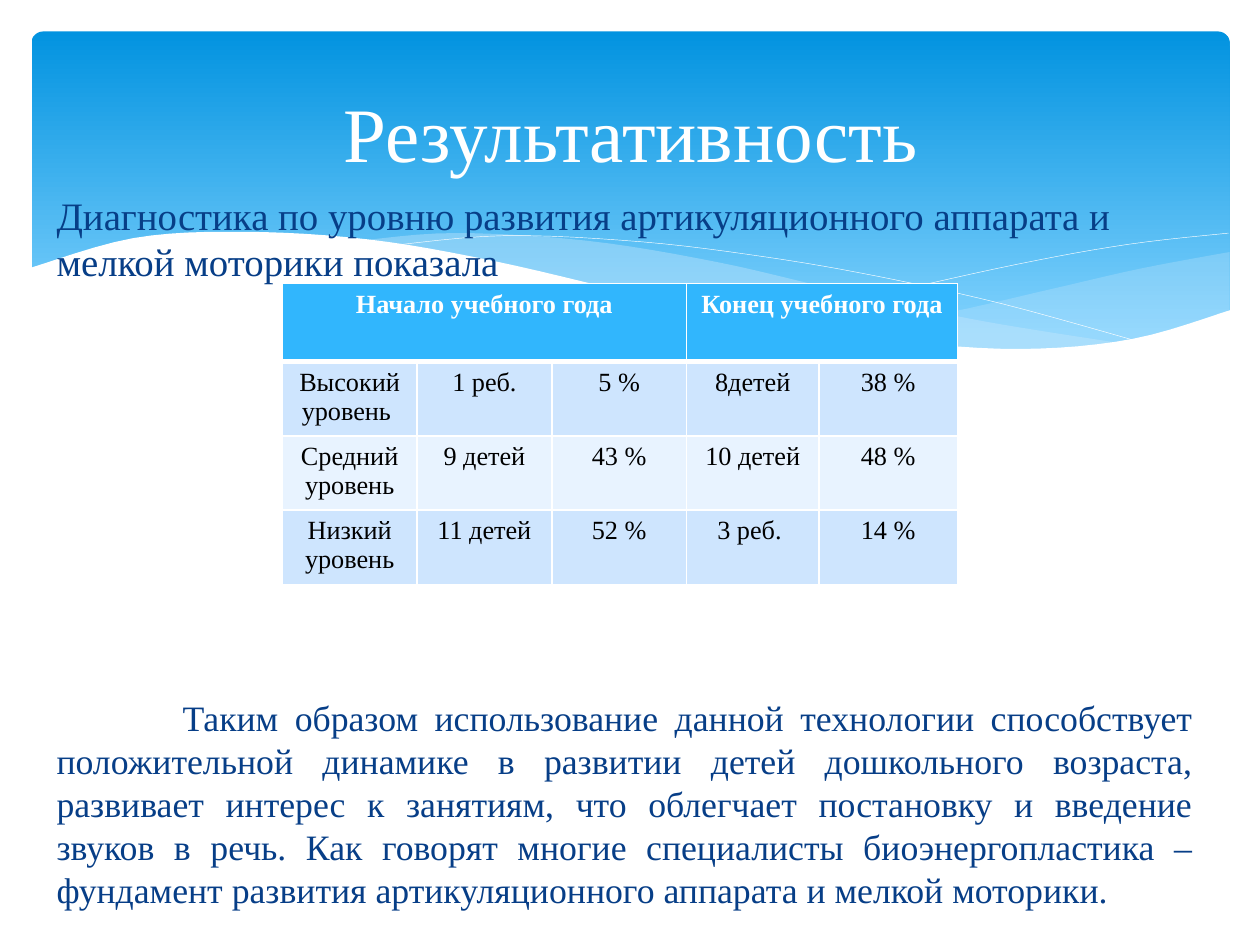
from dataclasses import dataclass
from itertools import chain
from lxml import etree
from pptx import Presentation
from pptx.dml.color import RGBColor
from pptx.enum.shapes import MSO_SHAPE
from pptx.enum.text import MSO_ANCHOR, PP_ALIGN
from pptx.oxml.ns import qn
from pptx.util import Inches, Pt

ROUND = MSO_SHAPE.ROUNDED_RECTANGLE
MIDDLE = MSO_ANCHOR.MIDDLE
LEFT, CENTER, JUST = PP_ALIGN.LEFT, PP_ALIGN.CENTER, PP_ALIGN.JUSTIFY


@dataclass(frozen=True)
class Theme:
    font: str = "Times New Roman"
    white: str = "FFFFFF"
    black: str = "000000"
    navy: str = "073E87"
    sky: tuple = ("0293E0", "83D3FE")
    mist: str = "C6E7FC"
    head: str = "31B6FD"
    bands: tuple = ("CEE5FE", "E8F3FF")
    title: float = 44
    lead: float = 22.2
    body: float = 20.4
    cell: float = 15
    hair: float = 0.25
    edge: float = 1
    rule: float = 3


THEME = Theme()
STEPS = 6

RIGHT_TOP = [(9.76, 2), (9.06, 2.13), (8.32, 2.3), (7.53, 2.48), (6.61, 2.65)]
RIGHT_LOW = [(6.61, 2.65), (7.32, 2.74), (8.03, 2.78), (8.72, 2.74), (9.28, 2.63), (9.76, 2.47)]
MID_TOP = [(8.93, 2.73), (7.75, 2.54), (6.68, 2.31), (5.69, 2.08), (4.65, 1.91), (3.61, 1.85), (2.86, 1.91)]
MID_LOW = [(2.86, 1.91), (3.83, 2.07), (4.91, 2.32), (6.01, 2.55), (6.95, 2.7), (7.96, 2.78), (8.93, 2.73)]
FALL = [(3.09, 1.95), (4.01, 1.87), (5.1, 1.92), (6.08, 2.04), (6.95, 2.19), (7.95, 2.41), (9.07, 2.72)]
RISE = [(6.13, 2.57), (6.95, 2.35), (8.06, 2.1), (8.95, 1.94), (9.75, 1.85)]
CREST = [(9.77, 2.46), (8.99, 2.69), (8.09, 2.77), (7.08, 2.7), (6.03, 2.54), (5.03, 2.33),
         (3.91, 2.07), (2.92, 1.9), (1.93, 1.84), (1.06, 1.89), (0.23, 2.13)]
BASE = [(0.23, 3.29), (9.77, 3.29)]

LEAD = "Диагностика по уровню развития артикуляционного аппарата и мелкой моторики показала"
CLOSE = (
    "Таким образом использование данной технологии способствует положительной "
    "динамике в развитии детей дошкольного возраста, развивает интерес к занятиям, "
    "что облегчает постановку и введение звуков в речь. Как говорят многие "
    "специалисты биоэнергопластика – фундамент развития артикуляционного аппарата "
    "и мелкой моторики."
)
COLS = (1.07, 1.07, 1.07, 1.05, 1.1)
ROWS = (0.62, 0.59, 0.59, 0.59)
HEADS = [(0, 2, "Начало учебного года"), (3, 4, "Конец учебного года")]
LEVELS = [
    ("Высокий уровень ", "1 реб.", "5 %", "8детей", "38 %"),
    ("Средний уровень", "9 детей", "43 %", "10 детей", "48 %"),
    ("Низкий уровень", "11 детей", "52 %", "3 реб. ", "14 %"),
]


def rgb(color):
    return RGBColor.from_string(color)


def paint(fill, color):
    fill.solid()
    fill.fore_color.rgb = rgb(color)


def write(par, text, size, color, align=LEFT, bold=False, before=0, indent=0):
    par.alignment = align
    par.space_before = Pt(before)
    if indent:
        par._p.get_or_add_pPr().set("indent", str(Inches(indent)))
    run = par.add_run()
    run.text = text
    font = run.font
    font.name, font.size, font.bold = THEME.font, Pt(size), bold
    font.color.rgb = rgb(color)


def add_box(slide, left, top, width, height):
    box = slide.shapes.add_textbox(*map(Inches, (left, top, width, height)))
    box.text_frame.word_wrap = True
    return box.text_frame


def add_sky(slide):
    sky = slide.shapes.add_shape(ROUND, *map(Inches, (0.25, 0.25, 9.51, 2.7)))
    sky.adjustments[0] = 0.034
    sky.shadow.inherit = False
    sky.line.fill.background()
    sky.fill.gradient()
    sky.fill.gradient_angle = 270
    for stop, place, color in zip(sky.fill.gradient_stops, (0, 0.9), THEME.sky):
        stop.position = place
        stop.color.rgb = rgb(color)


def blend(a, b, c, d, t):
    return b + t * (c - a + t * (2 * a - 5 * b + 4 * c - d + t * (3 * (b - c) + d - a))) / 2


def smooth(knots):
    ends = [knots[0], *knots, knots[-1]]
    spots = [knots[0]]
    for quad in zip(ends, ends[1:], ends[2:], ends[3:]):
        xs, ys = zip(*quad)
        for step in range(1, STEPS + 1):
            spots.append((blend(*xs, step / STEPS), blend(*ys, step / STEPS)))
    return spots


def add_path(shapes, arcs, close):
    spots = [(Inches(x), Inches(y)) for x, y in chain.from_iterable(map(smooth, arcs))]
    pen = shapes.build_freeform(*spots[0])
    pen.add_line_segments(spots[1:], close=close)
    path = pen.convert_to_shape()
    path.shadow.inherit = False
    return path


def add_wave(shapes, *arcs, color, alpha=100):
    wave = add_path(shapes, arcs, True)
    wave.line.fill.background()
    paint(wave.fill, color)
    if alpha < 100:
        tone = wave._element.spPr.find(".//" + qn("a:srgbClr"))
        etree.SubElement(tone, qn("a:alpha"), val=str(alpha * 1000))


def add_line(shapes, arc):
    line = add_path(shapes, [arc], False)
    line.fill.background()
    line.line.color.rgb = rgb(THEME.white)
    line.line.width = Pt(THEME.hair)


def add_waves(slide):
    shapes = slide.shapes.add_group_shape().shapes
    add_wave(shapes, RIGHT_TOP, RIGHT_LOW, color=THEME.mist, alpha=29)
    add_wave(shapes, MID_TOP, MID_LOW, color=THEME.mist, alpha=40)
    for arc in (FALL, RISE):
        add_line(shapes, arc)
    add_wave(shapes, CREST, BASE, color=THEME.white)


def style_cell(cell, color, below):
    paint(cell.fill, color)
    cell.margin_bottom = Inches(0.03)
    widths = {"L": THEME.edge, "R": THEME.edge, "T": THEME.edge, "B": below}
    props = cell._tc.get_or_add_tcPr()
    for spot, (side, width) in enumerate(widths.items()):
        edge = etree.Element(qn("a:ln" + side), w=str(Pt(width)))
        fill = etree.SubElement(edge, qn("a:solidFill"))
        etree.SubElement(fill, qn("a:srgbClr"), val=THEME.white)
        props.insert(spot, edge)


def add_grid(slide):
    size = map(Inches, (2.24, 2.25, sum(COLS), sum(ROWS)))
    grid = slide.shapes.add_table(len(ROWS), len(COLS), *size).table
    for col, width in zip(grid.columns, COLS):
        col.width = Inches(width)
    for row, height in zip(grid.rows, ROWS):
        row.height = Inches(height)
    for cell in grid.rows[0].cells:
        style_cell(cell, THEME.head, THEME.rule)
    for first, last, text in HEADS:
        cell = grid.cell(0, first)
        cell.merge(grid.cell(0, last))
        write(cell.text_frame.paragraphs[0], text, THEME.cell, THEME.white, align=CENTER, bold=True)
    for r, level in enumerate(LEVELS):
        for c, text in enumerate(level):
            cell = grid.cell(r + 1, c)
            style_cell(cell, THEME.bands[r % 2], THEME.edge)
            write(cell.text_frame.paragraphs[0], text, THEME.cell, THEME.black, align=CENTER)


def add_title(slide):
    title = add_box(slide, 0.51, 0.36, 9, 1.37)
    title.vertical_anchor = MIDDLE
    write(title.paragraphs[0], "Результативность", THEME.title, THEME.white, align=CENTER)


def add_body(slide):
    body = add_box(slide, 0.35, 1.47, 9.21, 5.51)
    write(body.paragraphs[0], LEAD, THEME.lead, THEME.navy)
    write(body.add_paragraph(), CLOSE, THEME.body, THEME.navy, align=JUST, before=235, indent=1)


def main():
    deck = Presentation()
    deck.slide_width, deck.slide_height = Inches(10), Inches(7.5)
    slide = deck.slides.add_slide(deck.slide_layouts[6])
    for add in (add_sky, add_waves, add_title, add_body, add_grid):
        add(slide)
    deck.save("out.pptx")


if __name__ == "__main__":
    main()
